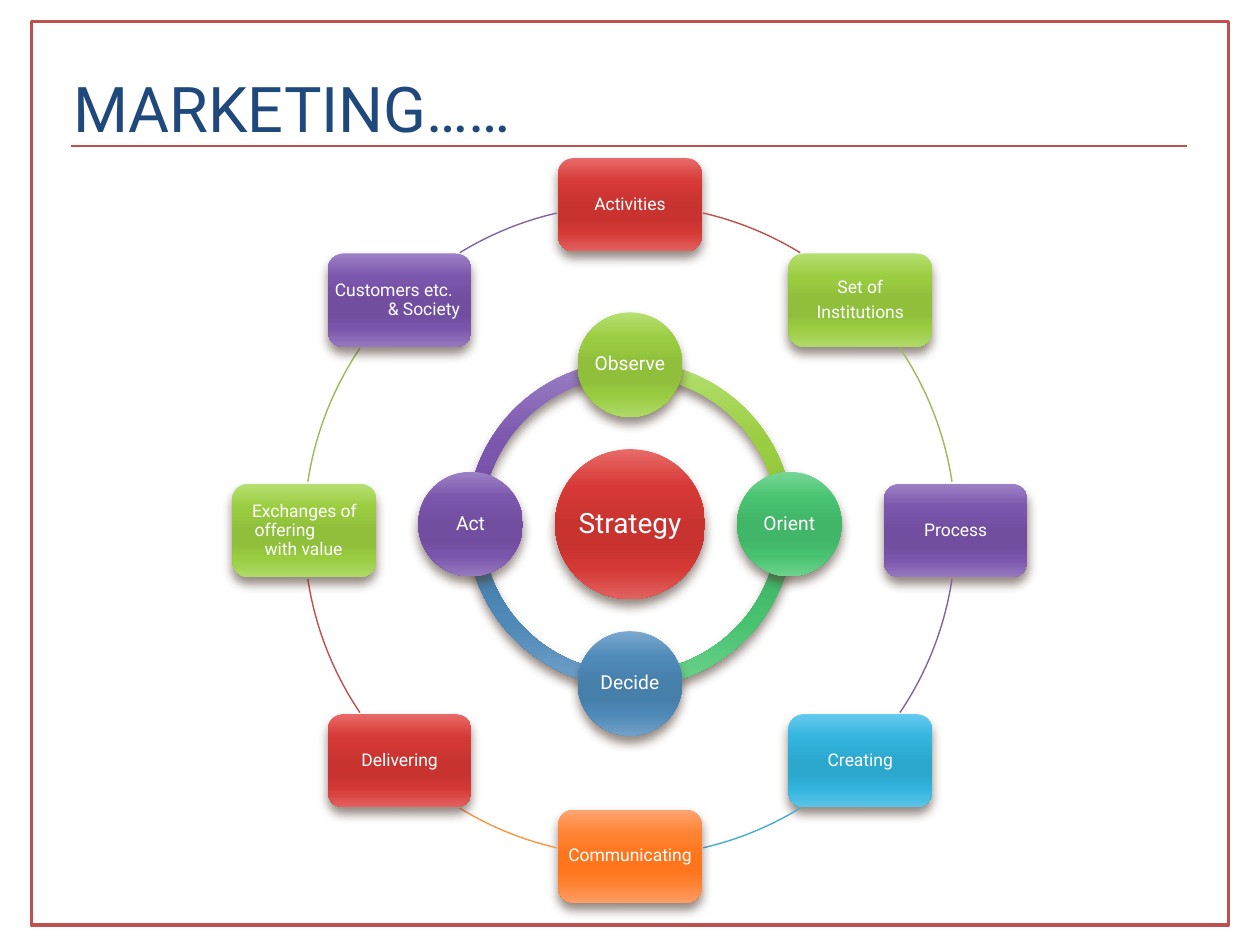
import math
from dataclasses import dataclass

import pptx
import pptx.dml.color
import pptx.enum.shapes
import pptx.enum.text
import pptx.oxml.ns
import pptx.util
from lxml import etree
from pptx.util import Inches

SHAPE = pptx.enum.shapes.MSO_SHAPE
ALIGN = pptx.enum.text.PP_ALIGN
qn = pptx.oxml.ns.qn

FONT = "Roboto"
STOPS = (0, 25, 50, 65, 80, 100)
GRADIENTS = {
    "red": "E86A68 D73936 C83330 C83330 D53935 E26260",
    "lime": "B5E071 9BCD41 8FBF3B 8FBF3B 9ACC41 AFDA69",
    "purple": "9C81C5 7B56AD 714EA0 714EA0 7A55AC 9679BF",
    "sky": "65CAEE 32B5DE 2CA8CF 2CA8CF 31B4DD 5DC4E9",
    "orange": "FFA573 FF8434 FF751C FF751C FF8332 FF9C66",
    "blue": "7BA8CE 4F8AB8 477FAB 477FAB 4E89B7 73A1C8",
    "green": "76D794 48C371 41B568 41B568 47C270 6ED28D",
}


@dataclass
class Node:
    lines: list[str]
    gradient: str
    link_color: str = ""
    indents: tuple[float, ...] = ()  # left indents; centred when empty


@dataclass
class Ring:
    x: float
    y: float
    radius: float

    def point(self, degrees: float) -> tuple[float, float]:
        """Point on the ring, clockwise from the top."""
        angle = math.radians(degrees)
        return (self.x + self.radius * math.sin(angle),
                self.y - self.radius * math.cos(angle))

    def bounds(self, radius: float) -> list[int]:
        return [Inches(v) for v in (self.x - radius, self.y - radius,
                                    2 * radius, 2 * radius)]


OUTER = Ring(5, 4.21, 2.585)
INNER = Ring(5, 4.16, 1.265)
BAND_RADIUS = 1.295

STAGES = [
    Node(["Activities"], "red", "C0504D"),
    Node(["Set of", "Institutions"], "lime", "9BBB59"),
    Node(["Process"], "purple", "8064A2"),
    Node(["Creating"], "sky", "4BACC6"),
    Node(["Communicating"], "orange", "F79646"),
    Node(["Delivering"], "red", "C0504D"),
    Node(["Exchanges of", "offering", "with value"], "lime", "9BBB59",
         (0.12, 0.14, 0.22)),
    Node(["Customers etc.", "& Society"], "purple", "8064A2", (0.02, 0.44)),
]
# Visible part of each link between stages, repeated every half turn
LINK_SPANS = [(13, 31.5), (56, 81.4), (98.6, 124), (148.5, 167)]

LOOP = [Node(["Observe"], "lime"), Node(["Orient"], "green"),
        Node(["Decide"], "blue"), Node(["Act"], "purple")]


def color(value: str) -> pptx.dml.color.RGBColor:
    return pptx.dml.color.RGBColor.from_string(value)


def arc_angle(degrees: float) -> float:
    """Adjustment value of an angle that is measured from the top."""
    return (degrees - 90) % 360 * 0.6


def add_color(parent, value: str):
    return etree.SubElement(parent, qn("a:srgbClr"), val=value)


def style_glossy(shape, gradient: str) -> None:
    """Six-stop vertical gradient with a soft shadow and no outline."""
    shape.fill.gradient()
    shape.fill.gradient_angle = 270
    stop_list = shape._element.spPr.find(qn("a:gradFill")).find(qn("a:gsLst"))
    for stop in list(stop_list):
        stop_list.remove(stop)
    for position, value in zip(STOPS, GRADIENTS[gradient].split()):
        add_color(etree.SubElement(stop_list, qn("a:gs"),
                                   pos=str(position * 1000)), value)
    shape.line.fill.background()
    shape.shadow.inherit = False
    effects = shape._element.spPr.find(qn("a:effectLst"))
    shadow = etree.SubElement(
        effects, qn("a:outerShdw"), blurRad=str(pptx.util.Pt(6)),
        dist=str(pptx.util.Pt(4)), dir="5400000", rotWithShape="0")
    etree.SubElement(add_color(shadow, "4E3B30"), qn("a:alpha"), val="60000")


def write_text(shape, lines: list[str], *, size: float, text_color="FFFFFF",
               align=ALIGN.CENTER, anchor=pptx.enum.text.MSO_ANCHOR.MIDDLE,
               insets=(0.04, 0.04, 0.04, 0.04), spacing=0.9, indents=(),
               wrap=True) -> None:
    frame = shape.text_frame
    frame.word_wrap = wrap
    frame.vertical_anchor = anchor
    (frame.margin_left, frame.margin_top,
     frame.margin_right, frame.margin_bottom) = map(Inches, insets)
    for index, text in enumerate(lines):
        para = frame.paragraphs[0] if index == 0 else frame.add_paragraph()
        para.alignment = ALIGN.LEFT if indents else align
        para.line_spacing = spacing
        if indents:
            para._p.get_or_add_pPr().set("marL", str(Inches(indents[index])))
        elif index < len(lines) - 1:
            para.space_after = pptx.util.Pt(0.35 * size)
        span = para.add_run()
        span.text = text
        span.font.name = FONT
        span.font.size = pptx.util.Pt(size)
        span.font.color.rgb = color(text_color)


def add_node(page, kind, center: tuple[float, float], width: float,
             height: float, node: Node, *, size: float, inset: float) -> None:
    x, y = center
    shape = page.shapes.add_shape(kind, Inches(x - width / 2), Inches(y - height / 2),
                                  Inches(width), Inches(height))
    style_glossy(shape, node.gradient)
    # Indented lines use the full width; circles keep their one word whole
    side = 0 if node.indents else inset
    write_text(shape, node.lines, size=size, insets=(side, inset, side, inset),
               indents=node.indents, wrap=kind != SHAPE.OVAL)


def add_link(page, start: float, end: float, line_color: str) -> None:
    arc = page.shapes.add_shape(SHAPE.ARC, *OUTER.bounds(OUTER.radius))
    arc.adjustments[0] = arc_angle(start)
    arc.adjustments[1] = arc_angle(end)
    arc.shadow.inherit = False
    arc.fill.background()
    arc.line.color.rgb = color(line_color)
    arc.line.width = pptx.util.Pt(0.79)


def add_band(page, start: float, gradient: str) -> None:
    band = page.shapes.add_shape(SHAPE.BLOCK_ARC, *INNER.bounds(BAND_RADIUS))
    band.adjustments[0] = arc_angle(start)
    band.adjustments[1] = arc_angle(start + 90)
    band.adjustments[2] = 0.046
    style_glossy(band, gradient)


def main() -> None:
    deck = pptx.Presentation()
    deck.slide_width, deck.slide_height = Inches(10), Inches(7.5)
    page = deck.slides.add_slide(deck.slide_layouts[6])

    # Rule and frame
    rule = page.shapes.add_connector(
        pptx.enum.shapes.MSO_CONNECTOR.STRAIGHT,
        Inches(0.56), Inches(1.16), Inches(9.42), Inches(1.16))
    rule.line.color.rgb = color("C0504D")
    rule.line.width = pptx.util.Pt(1.5)
    etree.SubElement(rule._element.spPr, qn("a:effectLst"))
    border = page.shapes.add_shape(SHAPE.RECTANGLE, Inches(0.25), Inches(0.17),
                                   Inches(9.5), Inches(7.17))
    border.shadow.inherit = False
    border.fill.background()
    border.line.color.rgb = color("C0504D")
    border.line.width = pptx.util.Pt(2)

    # Outer cycle
    for index, stage in enumerate(STAGES):
        add_node(page, SHAPE.ROUNDED_RECTANGLE, OUTER.point(index * 45),
                 1.14, 0.74, stage, size=10, inset=0.04)
        start, end = LINK_SPANS[index % 4]
        turn = index // 4 * 180
        add_link(page, start + turn, end + turn, stage.link_color)

    # Inner loop around the hub
    for index, step in reversed(list(enumerate(LOOP))):
        add_band(page, index * 90, step.gradient)
    add_node(page, SHAPE.OVAL, (INNER.x, INNER.y), 1.19, 1.19,
             Node(["Strategy"], "red"), size=16, inset=0.02)
    for index, step in enumerate(LOOP):
        add_node(page, SHAPE.OVAL, INNER.point(index * 90), 0.83, 0.83,
                 step, size=11, inset=0.02)

    # Title
    title = page.shapes.add_textbox(Inches(0.42), Inches(0.5),
                                    Inches(7.08), Inches(0.71))
    write_text(title, ["MARKETING……"], size=36, text_color="1F497D",
               align=ALIGN.LEFT, anchor=pptx.enum.text.MSO_ANCHOR.TOP,
               insets=(0.16, 0.05, 0.1, 0.05), spacing=1.0)

    deck.save("out.pptx")


if __name__ == "__main__":
    main()
